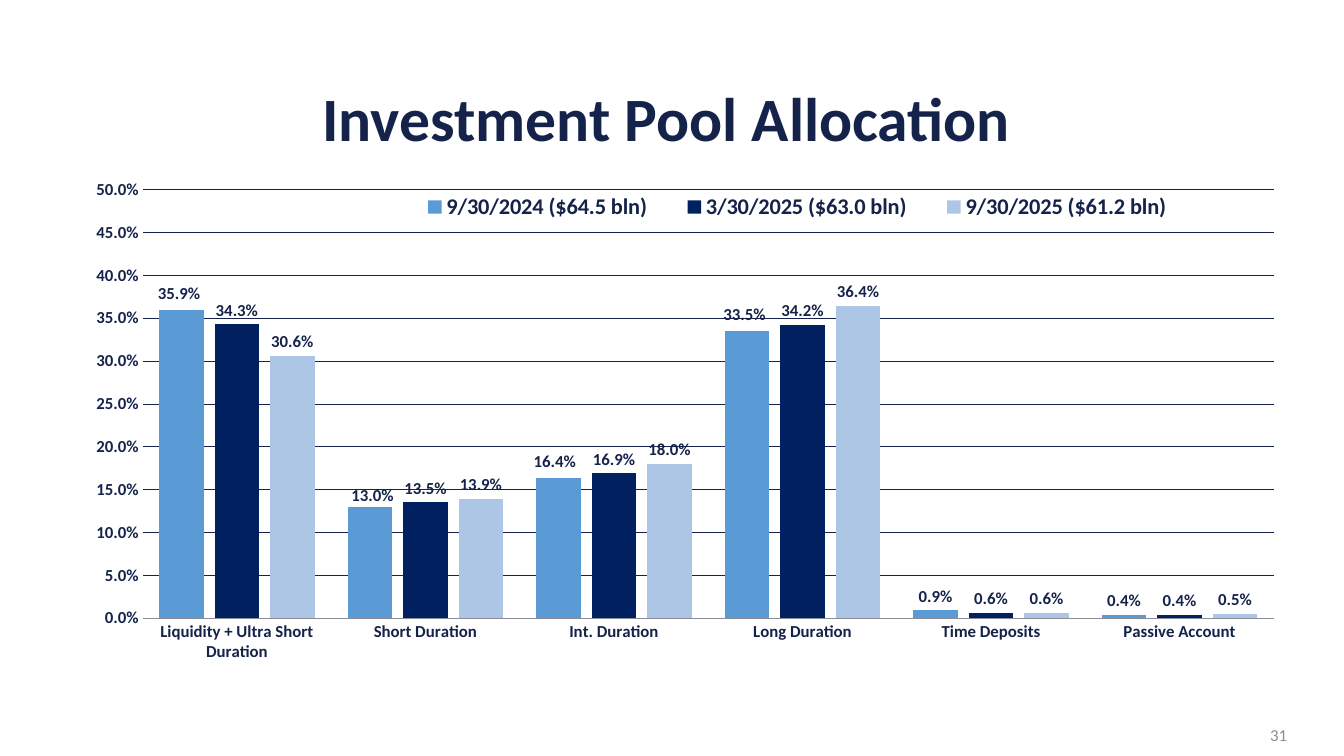
from lxml import etree
from pptx import Presentation
from pptx.chart.data import CategoryChartData
from pptx.dml.color import RGBColor
from pptx.enum.chart import (XL_CHART_TYPE, XL_LABEL_POSITION,
                             XL_LEGEND_POSITION, XL_TICK_MARK)
from pptx.enum.text import MSO_ANCHOR, PP_ALIGN
from pptx.oxml.ns import qn
from pptx.util import Inches, Pt

COLUMNS = XL_CHART_TYPE.COLUMN_CLUSTERED
ABOVE = XL_LABEL_POSITION.OUTSIDE_END
BOTTOM = XL_LEGEND_POSITION.BOTTOM
NO_TICK = XL_TICK_MARK.NONE
MIDDLE = MSO_ANCHOR.MIDDLE
CENTER, RIGHT = PP_ALIGN.CENTER, PP_ALIGN.RIGHT

NAVY = RGBColor(0x15, 0x23, 0x4A)
GRAY = RGBColor(0x8C, 0x8D, 0x96)
BLUE = RGBColor(0x5B, 0x9B, 0xD5)
DEEP = RGBColor(0x00, 0x20, 0x60)
PALE = RGBColor(0xAD, 0xC6, 0xE5)

WIDE, HIGH = Inches(13.33), Inches(7.5)
FACE = "Calibri"
PERCENT = "0.0%"

POOLS = ["Liquidity + Ultra Short Duration", "Short Duration", "Int. Duration",
         "Long Duration", "Time Deposits", "Passive Account"]
DATES = [
    ("9/30/2024 ($64.5 bln)", BLUE, (0.359, 0.13, 0.164, 0.335, 0.009, 0.004)),
    ("3/30/2025 ($63.0 bln)", DEEP, (0.343, 0.135, 0.169, 0.342, 0.006, 0.004)),
    ("9/30/2025 ($61.2 bln)", PALE, (0.306, 0.139, 0.18, 0.364, 0.006, 0.005)),
]
# Shifts of the first date's labels, in thousandths of the chart's size
SHIFTS = [(-2, -6), (2, 6), (-3, -4), (-2, -4)]


def put(obj, **vals):
    for name, val in vals.items():
        setattr(obj, name, val)


def style(font, size, color=NAVY, bold=True):
    put(font, name=FACE, size=Pt(size), bold=bold)
    font.color.rgb = color


def area(left, top, width, height):
    """Turn shares of the slide into lengths."""
    return (int(left * WIDE), int(top * HIGH),
            int(width * WIDE), int(height * HIGH))


def add_text(slide, box, text, size, color, bold, align, space=1.0):
    frame = slide.shapes.add_textbox(*area(*box)).text_frame
    put(frame, word_wrap=True, vertical_anchor=MIDDLE)
    para = frame.paragraphs[0]
    put(para, text=text, alignment=align, line_spacing=space)
    style(para.runs[0].font, size, color, bold)


def place(parent, index, **vals):
    """Give a chart part a manual layout, as shares of the chart."""
    for old in parent.findall(qn("c:layout")):
        parent.remove(old)
    layout = etree.Element(qn("c:layout"))
    manual = etree.SubElement(layout, qn("c:manualLayout"))
    for tag, val in vals.items():
        etree.SubElement(manual, qn("c:" + tag)).set("val", str(val))
    parent.insert(index, layout)


def add_axes(chart):
    pools, shares = chart.category_axis, chart.value_axis
    for axis in (pools, shares):
        put(axis, major_tick_mark=NO_TICK, minor_tick_mark=NO_TICK)
        style(axis.tick_labels.font, 12)
    pools.format.line.color.rgb = GRAY
    pools.format.line.width = Pt(0.5)
    put(shares, minimum_scale=0, maximum_scale=0.5, major_unit=0.05,
        has_major_gridlines=True)
    put(shares.tick_labels, number_format=PERCENT, number_format_is_linked=False)
    shares.format.line.fill.background()
    grid = shares.major_gridlines.format.line
    grid.color.rgb = NAVY
    grid.width = Pt(0.5)


def add_bars(plot):
    put(plot, gap_width=75, overlap=-25, vary_by_categories=False)
    for bars, (_, color, _) in zip(plot.series, DATES):
        bars.format.fill.solid()
        bars.format.fill.fore_color.rgb = color
        labels = bars.data_labels
        put(labels, show_value=True, position=ABOVE, number_format=PERCENT,
            number_format_is_linked=False)
        style(labels.font, 12)


def add_chart(slide, box):
    data = CategoryChartData(number_format=PERCENT)
    data.categories = POOLS
    for name, _, vals in DATES:
        data.add_series(name, vals)
    chart = slide.shapes.add_chart(COLUMNS, *area(*box), data).chart
    put(chart, has_title=False, has_legend=True)
    style(chart.font, 12)
    add_axes(chart)
    add_bars(chart.plots[0])

    # Legend
    put(chart.legend, position=BOTTOM, include_in_layout=True)
    style(chart.legend.font, 16)

    # Manual layouts
    root = chart.element
    place(next(root.iter(qn("c:plotArea"))), 0, layoutTarget="inner",
          xMode="edge", yMode="edge", x=0.063, y=0.041, w=0.928, h=0.835)
    place(next(root.iter(qn("c:legend"))), 1, xMode="edge", yMode="edge",
          x=0.27, y=0.04, w=0.66, h=0.07)
    first = chart.plots[0].series[0]
    for i in range(len(SHIFTS)):
        first.points[i].data_label.position = ABOVE
    for label, (x, y) in zip(root.iter(qn("c:dLbl")), SHIFTS):
        place(label, 1, x=x / 1000, y=y / 1000)


def main():
    deck = Presentation()
    put(deck, slide_width=WIDE, slide_height=HIGH)
    slide = deck.slides.add_slide(deck.slide_layouts[6])
    # Page number, chart, title
    add_text(slide, (0.74, 0.945, 0.225, 0.053), "31", 12, GRAY, False, RIGHT)
    add_chart(slide, (0.049, 0.223, 0.907, 0.679))
    add_text(slide, (0.049, 0.1, 0.894, 0.121), "Investment Pool Allocation",
             44, NAVY, True, CENTER, 0.9)
    deck.save("out.pptx")


if __name__ == "__main__":
    main()
